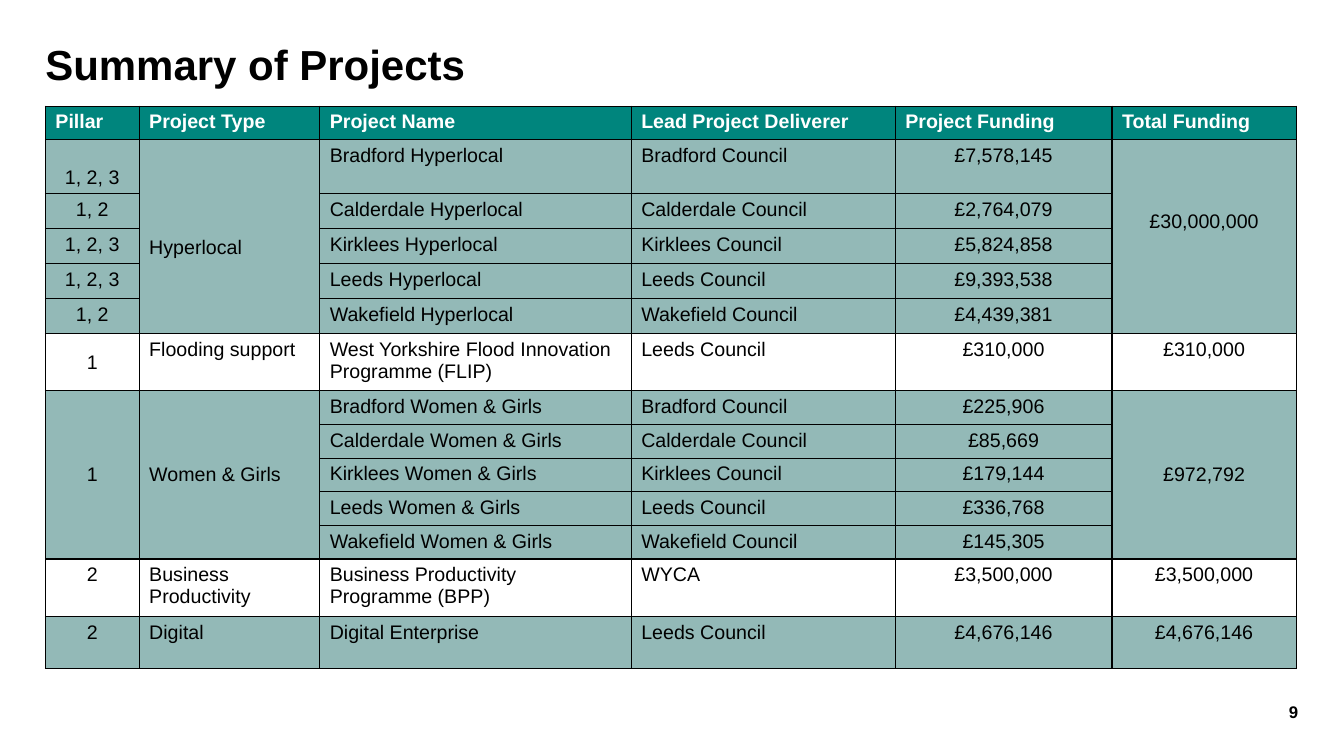
from lxml import etree
from pptx import Presentation
from pptx.dml.color import RGBColor
from pptx.enum.text import MSO_ANCHOR, PP_ALIGN
from pptx.oxml.ns import qn
from pptx.util import Pt

TOP, MID, LOW = MSO_ANCHOR.TOP, MSO_ANCHOR.MIDDLE, MSO_ANCHOR.BOTTOM
LEFT, MIDST, RIGHT = PP_ALIGN.LEFT, PP_ALIGN.CENTER, PP_ALIGN.RIGHT

TITLE = "Summary of Projects"
PAGE = "9"
HEADS = ["Pillar", "Project Type", "Project Name", "Lead Project Deliverer",
         "Project Funding", "Total Funding"]
GROUPS = [
    ("Hyperlocal", "£30,000,000", [
        ("1, 2, 3", "Bradford Hyperlocal", "Bradford Council", "£7,578,145", 38.6),
        ("1, 2", "Calderdale Hyperlocal", "Calderdale Council", "£2,764,079", 25),
        ("1, 2, 3", "Kirklees Hyperlocal", "Kirklees Council", "£5,824,858", 25),
        ("1, 2, 3", "Leeds Hyperlocal", "Leeds Council", "£9,393,538", 25),
        ("1, 2", "Wakefield Hyperlocal", "Wakefield Council", "£4,439,381", 25)]),
    ("Flooding support", "£310,000", [
        ("1", "West Yorkshire Flood Innovation Programme (FLIP)",
         "Leeds Council", "£310,000", 38.6)]),
    ("Women & Girls", "£972,792", [
        ("1", "Bradford Women & Girls", "Bradford Council", "£225,906", 22.8),
        ("", "Calderdale Women & Girls", "Calderdale Council", "£85,669", 22.8),
        ("", "Kirklees Women & Girls", "Kirklees Council", "£179,144", 22.8),
        ("", "Leeds Women & Girls", "Leeds Council", "£336,768", 22.8),
        ("", "Wakefield Women & Girls", "Wakefield Council", "£145,305", 22.8)]),
    ("Business Productivity", "£3,500,000", [
        ("2", "Business Productivity Programme (BPP)", "WYCA", "£3,500,000", 38.6)]),
    ("Digital", "£4,676,146", [
        ("2", "Digital Enterprise", "Leeds Council", "£4,676,146", 37.4)]),
]
WIDTHS = [67, 129, 222.5, 188.6, 154.8, 131.7]
ALIGNS = [MIDST, LEFT, LEFT, LEFT, MIDST, MIDST]
HEAD_H = 22.8
X, Y = 32.4, 75.8
PLACES = {
    "1, 2, 3 Bradford Hyperlocal": LOW,
    "1 West Yorkshire Flood Innovation Programme (FLIP)": MID,
}
DROPS = {"Hyperlocal": (MID, 19.3), "£30,000,000": (TOP, 50.7)}
TEAL, SAGE, WHITE, BLACK = "00857D", "93B9B7", "FFFFFF", "000000"


def color(code):
    return RGBColor.from_string(code)


def put(para, text, align, size, ink, bold):
    para.alignment = align
    run = para.add_run()
    run.text = text
    look = {"name": "Arial", "size": Pt(size), "bold": bold}
    for key, val in look.items():
        setattr(run.font, key, val)
    run.font.color.rgb = color(ink)


def label(slide, box, text, align, size, anchor):
    frame = slide.shapes.add_textbox(*map(Pt, box)).text_frame
    look = {"margin_left": 0, "margin_right": 0, "margin_top": 0,
            "margin_bottom": 0, "word_wrap": True, "vertical_anchor": anchor}
    for key, val in look.items():
        setattr(frame, key, val)
    put(frame.paragraphs[0], text, align, size, BLACK, True)
    return frame


def edge(cell):
    props = cell._tc.get_or_add_tcPr()
    for spot, tag in enumerate(("a:lnL", "a:lnR", "a:lnT", "a:lnB")):
        line = etree.Element(qn(tag), w=str(Pt(1)))
        fill = etree.SubElement(line, qn("a:solidFill"))
        etree.SubElement(fill, qn("a:srgbClr"), val=BLACK)
        props.insert(spot, line)


def style(cell, text, align, fill, ink=BLACK, bold=False, anchor=TOP, drop=3.6):
    look = {"margin_left": Pt(7.2), "margin_right": Pt(7.2), "margin_top": Pt(drop),
            "margin_bottom": Pt(3.6), "vertical_anchor": anchor}
    for key, val in look.items():
        setattr(cell, key, val)
    cell.fill.solid()
    cell.fill.fore_color.rgb = color(fill)
    edge(cell)
    para = cell.text_frame.paragraphs[0]
    if text:
        put(para, text, align, 14, ink, bold)
    else:
        para.font.size = Pt(14)


def main():
    deck = Presentation()
    deck.slide_width, deck.slide_height = Pt(960), Pt(540)
    slide = deck.slides.add_slide(deck.slide_layouts[6])
    label(slide, (876.2, 493.9, 51.1, 28.8), PAGE, RIGHT, 12, MID)
    title = label(slide, (X, 31.7, sum(WIDTHS), 40), TITLE, LEFT, 30, TOP)
    title.paragraphs[0].line_spacing = 0.9

    highs = [HEAD_H] + [item[-1] for _, _, items in GROUPS for item in items]
    grid = slide.shapes.add_table(len(highs), len(WIDTHS), Pt(X), Pt(Y),
                                  Pt(sum(WIDTHS)), Pt(sum(highs))).table
    grid.horz_banding = False
    for col, wide in zip(grid.columns, WIDTHS):
        col.width = Pt(wide)
    for row, high in zip(grid.rows, highs):
        row.height = Pt(high)
    for col, text in enumerate(HEADS):
        style(grid.cell(0, col), text, LEFT, TEAL, WHITE, True)

    top = 1
    for turn, (kind, total, items) in enumerate(GROUPS):
        fill = WHITE if turn % 2 else SAGE
        last = top + len(items) - 1
        for step, (pillar, name, lead, money, _) in enumerate(items):
            first = step == 0
            texts = [pillar, kind if first else "", name, lead, money,
                     total if first else ""]
            for col, (text, align) in enumerate(zip(texts, ALIGNS)):
                anchor, drop = DROPS.get(text, (TOP, 3.6))
                if col == 0:
                    anchor = PLACES.get(f"{pillar} {name}", TOP)
                style(grid.cell(top + step, col), text, align, fill,
                      anchor=anchor, drop=drop)
        if len(items) > 1:
            spans = [1, 5] if items[1][0] else [0, 1, 5]
            for col in spans:
                cell = grid.cell(top, col)
                cell.merge(grid.cell(last, col))
                if len(spans) == 3:
                    cell.vertical_anchor = MID
        top = last + 1

    deck.save("out.pptx")


if __name__ == "__main__":
    main()
